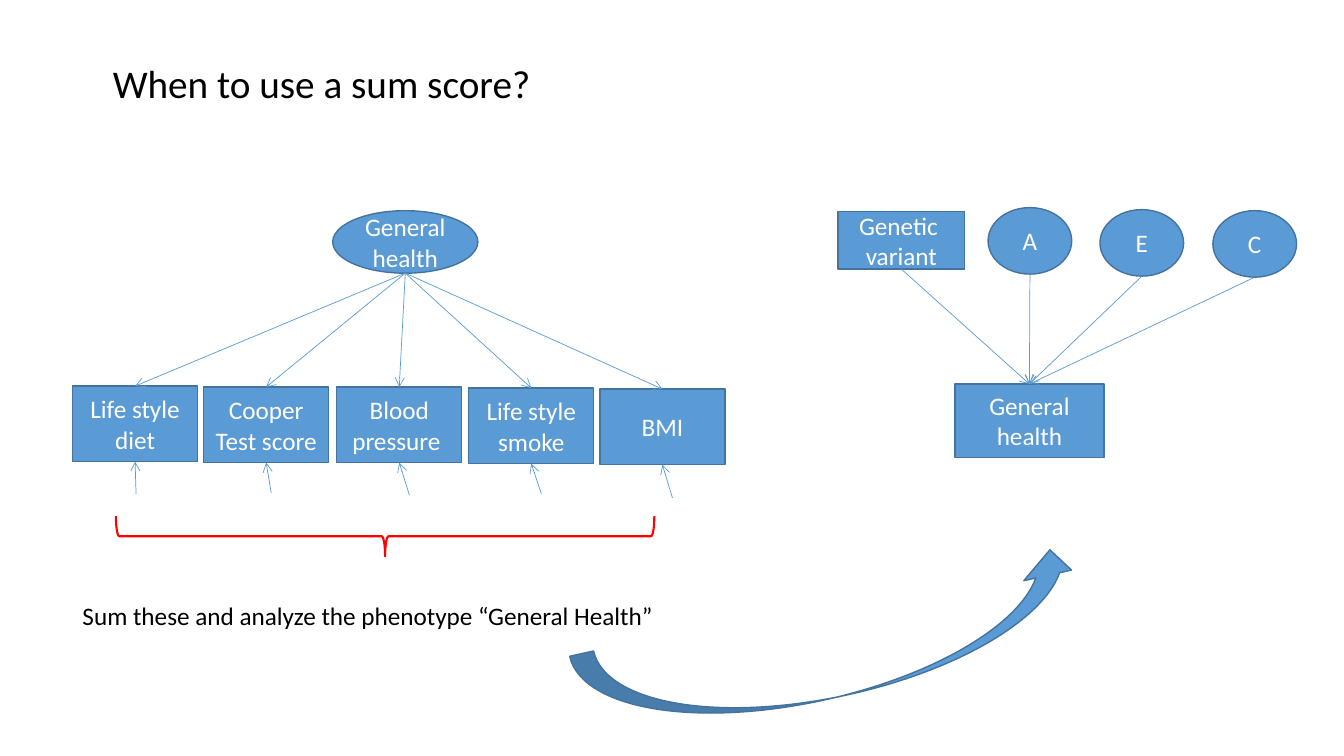
from dataclasses import dataclass

from lxml import etree
from pptx import Presentation
from pptx import util as u
from pptx.dml.color import RGBColor
from pptx.enum import shapes, text
from pptx.oxml import ns

BLUE = RGBColor(0x5B, 0x9B, 0xD5)
OUTLINE = RGBColor(0x43, 0x73, 0x9E)
RED = RGBColor(0xFF, 0x00, 0x00)
WHITE = RGBColor(0xFF, 0xFF, 0xFF)
BLACK = RGBColor(0x00, 0x00, 0x00)

RECT = shapes.MSO_SHAPE.RECTANGLE
OVAL = shapes.MSO_SHAPE.OVAL


@dataclass(frozen=True)
class Node:
    """A variable of a path diagram; sizes in inches."""
    label: str
    left: float
    top: float
    width: float
    height: float
    kind: shapes.MSO_SHAPE = RECT

    @property
    def top_centre(self) -> tuple[float, float]:
        return self.left + self.width / 2, self.top

    @property
    def bottom_centre(self) -> tuple[float, float]:
        return self.left + self.width / 2, self.top + self.height


@dataclass(frozen=True)
class Indicator:
    """A measured item and the offset at which its error arrow starts."""
    node: Node
    error_dx: float
    error_dy: float


def indicator(label: str, left: float, top: float, dx: float, dy: float) -> Indicator:
    return Indicator(Node(label, left, top, 1.24, 0.75), dx, dy)


LATENT_HEALTH = Node("General\nhealth", 3.3, 2.09, 1.44, 0.62, OVAL)
INDICATORS = [
    indicator("Life style\ndiet", 0.72, 3.83, 0.01, 0.32),
    indicator("Cooper\nTest score", 2.02, 3.84, 0.05, 0.3),
    indicator("Blood pressure ", 3.34, 3.84, 0.1, 0.32),
    indicator("Life style smoke", 4.65, 3.85, 0.1, 0.3),
    indicator("BMI", 5.95, 3.86, 0.1, 0.33),
]
SUM_HEALTH = Node("General health", 9.47, 3.81, 1.48, 0.73)
CAUSES = [
    Node("Genetic  variant", 8.31, 2.1, 1.26, 0.57),
    Node("A", 9.8, 2.06, 0.83, 0.66, OVAL),
    Node("E", 10.91, 2.08, 0.83, 0.66, OVAL),
    Node("C", 12.03, 2.09, 0.83, 0.66, OVAL),
]


def write(frame, label: str, size: int, colour: RGBColor, align: text.PP_ALIGN) -> None:
    frame.text = label
    font_format = {"name": "Calibri", "size": u.Pt(size)}
    for paragraph in frame.paragraphs:
        paragraph.alignment = align
        for run in paragraph.runs:
            for key, value in font_format.items():
                setattr(run.font, key, value)
            run.font.color.rgb = colour


def add_outlined(slide, kind, box: tuple[float, ...], fill: RGBColor | None = BLUE,
                 line: RGBColor = OUTLINE, line_width: float = 1, rotation: float = 0):
    """Add a preset shape; a fill of None leaves it hollow."""
    shape = slide.shapes.add_shape(kind, *map(u.Inches, box))
    shape.shadow.inherit = False
    shape.rotation = rotation
    if fill is None:
        shape.fill.background()
    else:
        shape.fill.solid()
        shape.fill.fore_color.rgb = fill
    shape.line.color.rgb = line
    shape.line.width = u.Pt(line_width)
    return shape


def add_node(slide, node: Node) -> None:
    box = node.left, node.top, node.width, node.height
    frame = add_outlined(slide, node.kind, box).text_frame
    frame_format = {"word_wrap": True, "vertical_anchor": text.MSO_ANCHOR.MIDDLE}
    for key, value in frame_format.items():
        setattr(frame, key, value)
    write(frame, node.label, 18, WHITE, text.PP_ALIGN.CENTER)


def add_arrow(slide, start: tuple[float, float], end: tuple[float, float]) -> None:
    arrow = slide.shapes.add_connector(
        shapes.MSO_CONNECTOR.STRAIGHT, *map(u.Inches, (*start, *end)))
    arrow.line.color.rgb = BLUE
    arrow.line.width = u.Pt(0.5)
    etree.SubElement(arrow.line._get_or_add_ln(), ns.qn("a:tailEnd"), type="arrow")
    etree.SubElement(arrow._element.spPr, ns.qn("a:effectLst"))


def add_caption(slide, label: str, box: tuple[float, ...], size: int) -> None:
    frame = slide.shapes.add_textbox(*map(u.Inches, box)).text_frame
    frame_format = {"word_wrap": False, "auto_size": text.MSO_AUTO_SIZE.SHAPE_TO_FIT_TEXT}
    for key, value in frame_format.items():
        setattr(frame, key, value)
    write(frame, label, size, BLACK, text.PP_ALIGN.LEFT)


def add_causal_model(slide) -> None:
    add_node(slide, SUM_HEALTH)
    for cause in CAUSES:
        add_node(slide, cause)
        add_arrow(slide, cause.bottom_centre, SUM_HEALTH.top_centre)


def add_factor_model(slide) -> None:
    add_node(slide, LATENT_HEALTH)
    for item in INDICATORS:
        add_node(slide, item.node)
        add_arrow(slide, LATENT_HEALTH.bottom_centre, item.node.top_centre)
        x, y = item.node.bottom_centre
        add_arrow(slide, (x + item.error_dx, y + item.error_dy), (x, y))


def main() -> None:
    deck = Presentation()
    deck.slide_width, deck.slide_height = u.Inches(13.33), u.Inches(7.5)
    slide = deck.slides.add_slide(deck.slide_layouts[6])

    add_causal_model(slide)
    add_outlined(slide, shapes.MSO_SHAPE.LEFT_BRACE, (3.62, 2.65, 0.4, 5.34),
                 fill=None, line=RED, line_width=1.5, rotation=270)
    add_caption(slide, "Sum these and analyze the phenotype “General Health”",
                (0.72, 5.91, 5.93, 0.4), 18)
    add_outlined(slide, shapes.MSO_SHAPE.CURVED_RIGHT_ARROW,
                 (7.77, 3.87, 0.97, 5.12), rotation=257.5)
    add_caption(slide, "When to use a sum score?", (1.02, 0.54, 4.39, 0.57), 28)
    add_factor_model(slide)

    deck.save("out.pptx")


if __name__ == "__main__":
    main()
